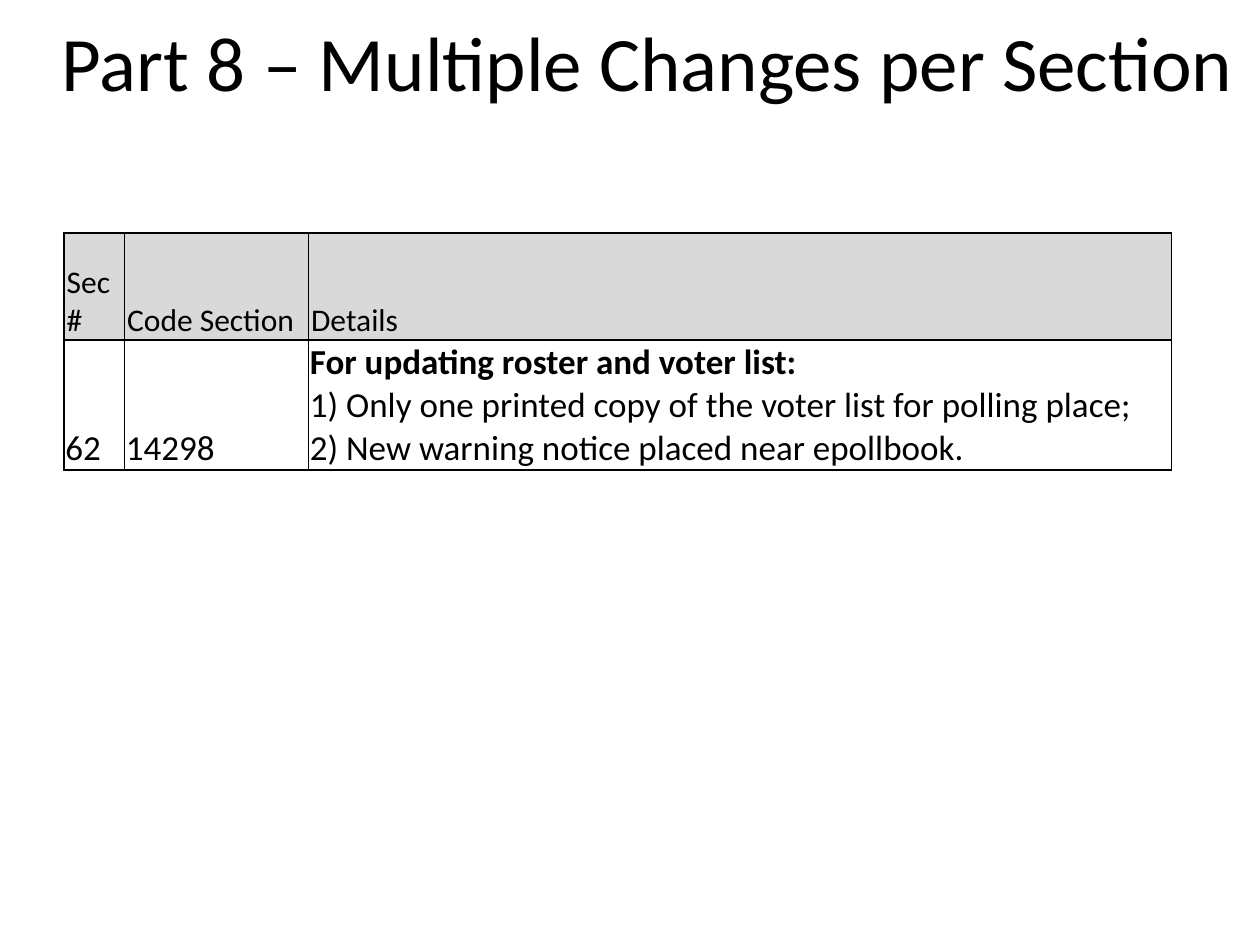
from lxml import etree
from pptx import Presentation
from pptx.dml.color import RGBColor
from pptx.enum.text import MSO_ANCHOR, MSO_AUTO_SIZE, PP_ALIGN
from pptx.oxml.ns import qn
from pptx.util import Inches, Pt


def add_text(paragraph, text, size, bold=False):
    run = paragraph.add_run()
    run.text = text
    run.font.name = "Calibri"
    run.font.size = Pt(size)
    run.font.bold = bold
    run.font.color.rgb = RGBColor.from_string("000000")


def add_borders(cell, color):
    properties = cell._tc.get_or_add_tcPr()
    for position, side in enumerate(("a:lnL", "a:lnR", "a:lnT", "a:lnB")):
        line = etree.Element(qn(side), w=str(Pt(1)))
        fill = etree.SubElement(line, qn("a:solidFill"))
        etree.SubElement(fill, qn("a:srgbClr"), val=color)
        properties.insert(position, line)


prs = Presentation()
prs.slide_width, prs.slide_height = Inches(10), Inches(7.5)
slide = prs.slides.add_slide(prs.slide_layouts[5])

heading = slide.shapes.title
heading.left, heading.top = Inches(0.39), Inches(0.13)
heading.width, heading.height = Inches(9.55), Inches(0.8)
heading.text_frame.word_wrap = True
heading.text_frame.auto_size = MSO_AUTO_SIZE.NONE
heading.text_frame.vertical_anchor = MSO_ANCHOR.MIDDLE
heading_line = heading.text_frame.paragraphs[0]
heading_line.alignment = PP_ALIGN.LEFT
heading_line.line_spacing = 0.9
add_text(heading_line, "Part 8 – Multiple Changes per Section", 44)

column_widths = [0.48, 1.46, 6.85]
row_heights = [0.85, 1.03]
changes = slide.shapes.add_table(
    2, 3, Inches(0.51), Inches(1.85), Inches(sum(column_widths)), Inches(sum(row_heights))
).table
for column, width in zip(changes.columns, column_widths):
    column.width = Inches(width)
for row, height in zip(changes.rows, row_heights):
    row.height = Inches(height)

entries = [
    [["Sec#"], ["Code Section"], ["Details"]],
    [
        ["62"],
        ["14298"],
        [
            "For updating roster and voter list:",
            "1) Only one printed copy of the voter list for polling place;",
            "2) New warning notice placed near epollbook.",
        ],
    ],
]
row_styles = [(18, 0.02, "D9D9D9"), (20, 0.01, None)]
for row, row_entries, (size, margin, fill) in zip(changes.rows, entries, row_styles):
    for cell, lines in zip(row.cells, row_entries):
        cell.vertical_anchor = MSO_ANCHOR.BOTTOM
        cell.margin_left = cell.margin_right = cell.margin_top = Inches(margin)
        cell.margin_bottom = 0
        if fill:
            cell.fill.solid()
            cell.fill.fore_color.rgb = RGBColor.from_string(fill)
        else:
            cell.fill.background()
        add_borders(cell, "000000")
        paragraph = cell.text_frame.paragraphs[0]
        for number, line in enumerate(lines):
            if number:
                paragraph.add_line_break()
            add_text(paragraph, line, size, bold=len(lines) > 1 and number == 0)

prs.save("out.pptx")
